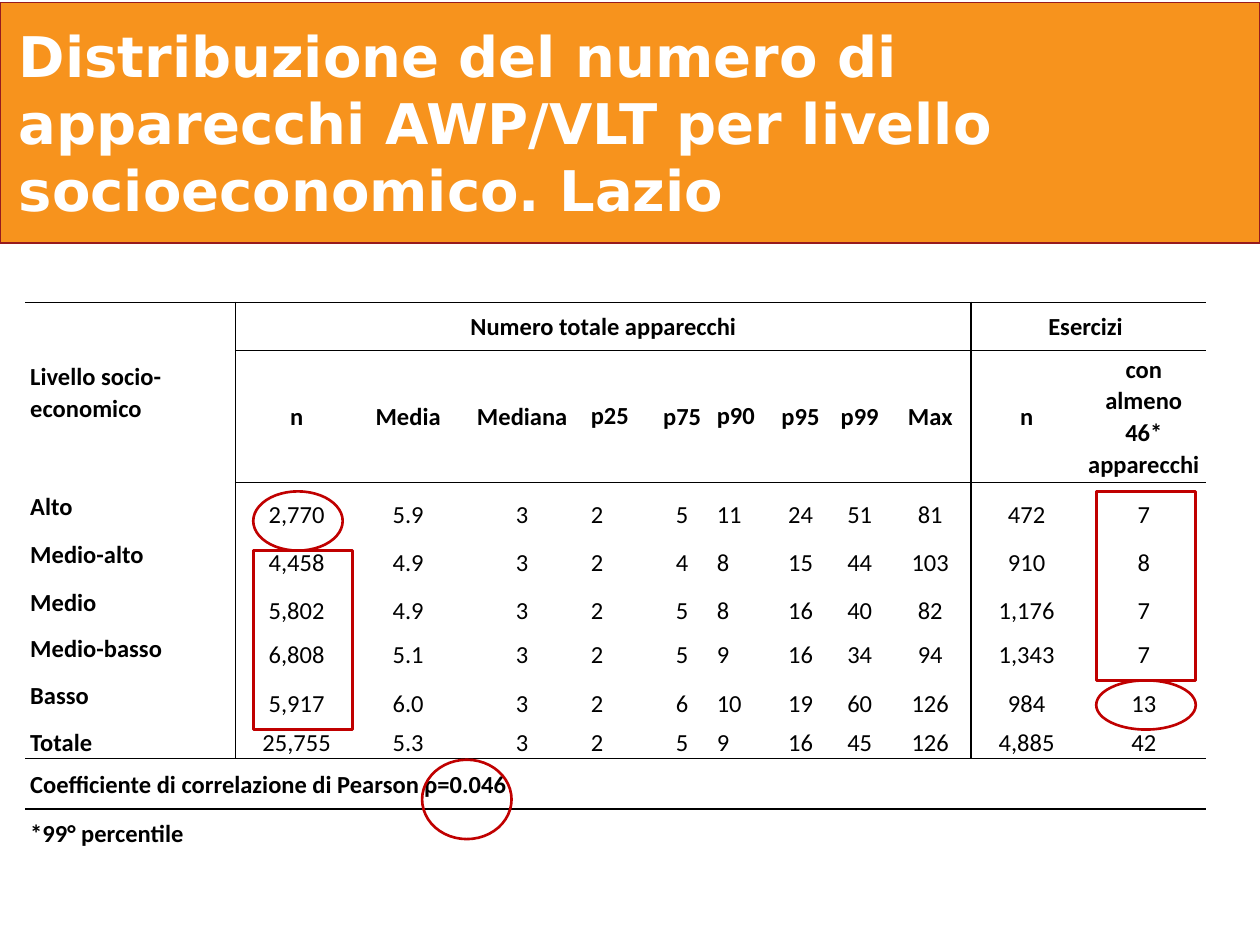
import pptx
import pptx.dml.color
import pptx.enum.shapes
import pptx.enum.text
import pptx.oxml.ns
import pptx.util
from lxml import etree

Inches, Pt = pptx.util.Inches, pptx.util.Pt
ALIGN, ANCHOR = pptx.enum.text.PP_ALIGN, pptx.enum.text.MSO_ANCHOR
SHAPE = pptx.enum.shapes.MSO_SHAPE

COLOURS = {"banner": "F7931D", "banner edge": "971B1E", "mark": "C00000",
           "white": "FFFFFF", "black": "000000"}
TITLE = "Distribuzione del numero di apparecchi AWP/VLT per livello socioeconomico. Lazio"
HEADINGS = ["n", "Media", "Mediana", "p25", "p75", "p90", "p95", "p99", "Max", "n",
            "con almeno 46* apparecchi"]
LEVELS = [
    ["Alto", "2,770", "5.9", "3", "2", "5", "11", "24", "51", "81", "472", "7"],
    ["Medio-alto", "4,458", "4.9", "3", "2", "4", "8", "15", "44", "103", "910", "8"],
    ["Medio", "5,802", "4.9", "3", "2", "5", "8", "16", "40", "82", "1,176", "7"],
    ["Medio-basso", "6,808", "5.1", "3", "2", "5", "9", "16", "34", "94", "1,343", "7"],
    ["Basso", "5,917", "6.0", "3", "2", "6", "10", "19", "60", "126", "984", "13"],
    ["Totale", "25,755", "5.3", "3", "2", "5", "9", "16", "45", "126", "4,885", "42"],
]
PEARSON = "Coefficiente di correlazione di Pearson ρ=0.046"
FOOTNOTE = "*99° percentile"

COLUMN_WIDTHS = [1.67, 0.97, 0.8, 0.8, 0.21, 0.35, 0.18, 0.47, 0.15, 0.32, 0.47, 0.47,
                 0.65, 0.88, 0.98]
ROW_HEIGHTS = [0.38, 1.05, 0.38, 0.38, 0.38, 0.35, 0.39, 0.31, 0.4, 0.38]
CELL_MARGIN = 0.04
FIELD_STARTS = [0, 1, 2, 3, 5, 7, 8, 10, 11, 12, 13, 14]
LEFT_ALIGNED = {0, 5, 8}
FIRST_LEVEL, TOTAL, PEARSON_ROW, NOTE_ROW = 2, 7, 8, 9
LAST_COLUMN = len(COLUMN_WIDTHS) - 1
# Line above a row -> first column it crosses
RULES_ABOVE = {0: 0, 1: 1, FIRST_LEVEL: 1, PEARSON_ROW: 0, NOTE_ROW: 0}
RULES_RIGHT_OF = {0, 12}
PLAIN_TABLE_STYLE = "{2D5ABB26-0587-4C30-8999-92F81FD0307C}"

MARKS = [
    (SHAPE.OVAL, 3.35, 6.03, 0.71, 0.63),
    (SHAPE.OVAL, 2.01, 3.9, 0.71, 0.47),
    (SHAPE.RECTANGLE, 2.01, 4.37, 0.79, 1.42),
    (SHAPE.RECTANGLE, 8.7, 3.9, 0.79, 1.5),
    (SHAPE.OVAL, 8.7, 5.4, 0.79, 0.39),
]


def colour(name):
    return pptx.dml.color.RGBColor.from_string(COLOURS[name])


def format_run(span, font, size, name, bold):
    span.font.name, span.font.size, span.font.bold = font, Pt(size), bold
    span.font.color.rgb = colour(name)


def add_outline(page, kind, place, edge, weight):
    shape = page.shapes.add_shape(kind, *map(Inches, place))
    shape.shadow.inherit = False
    shape.fill.background()
    shape.line.color.rgb = colour(edge)
    shape.line.width = Pt(weight)
    return shape


def has_rule_above(row, column):
    return row in RULES_ABOVE and column >= RULES_ABOVE[row]


def cell_edges(row, column):
    """Sides of a cell in schema order, each with whether it carries a line."""
    upright = row <= TOTAL
    return {
        "lnL": upright and column - 1 in RULES_RIGHT_OF,
        "lnR": upright and column in RULES_RIGHT_OF,
        "lnT": has_rule_above(row, column),
        "lnB": has_rule_above(row + 1, column),
    }


def style_cell(cell, row, column):
    properties = cell._tc.get_or_add_tcPr()
    for tag, drawn in cell_edges(row, column).items():
        line = etree.SubElement(properties, pptx.oxml.ns.qn("a:" + tag), w=str(Pt(1)))
        fill = etree.SubElement(line, pptx.oxml.ns.qn("a:solidFill" if drawn else "a:noFill"))
        if drawn:
            etree.SubElement(fill, pptx.oxml.ns.qn("a:srgbClr"), val=COLOURS["black"])
    cell.fill.solid()
    cell.fill.fore_color.rgb = colour("white")
    cell.margin_left = cell.margin_right = Inches(CELL_MARGIN)
    cell.margin_top = cell.margin_bottom = 0
    in_levels = FIRST_LEVEL <= row <= TOTAL
    low = row == TOTAL or (in_levels and column > 0)
    cell.vertical_anchor = ANCHOR.BOTTOM if low else ANCHOR.MIDDLE


def write_cell(table, row, column, text):
    cell = table.cell(row, column)
    cell.text_frame.text = text
    para = cell.text_frame.paragraphs[0]
    para.alignment = ALIGN.LEFT if column in LEFT_ALIGNED else ALIGN.CENTER
    if column not in LEFT_ALIGNED or column == 0:
        para.line_spacing, para.space_after = 1.07, Pt(8)
    number = FIRST_LEVEL <= row <= TOTAL and column > 0
    format_run(para.runs[0], "Calibri", 14, "black", not number)


def add_level_table(page):
    frame = page.shapes.add_table(
        len(ROW_HEIGHTS), len(COLUMN_WIDTHS), Inches(0.2), Inches(2.4),
        Inches(sum(COLUMN_WIDTHS)), Inches(sum(ROW_HEIGHTS)))
    table = frame.table
    table.first_row = table.horz_banding = False
    table._tbl.tblPr.find(pptx.oxml.ns.qn("a:tableStyleId")).text = PLAIN_TABLE_STYLE
    for column, width in zip(table.columns, COLUMN_WIDTHS):
        column.width = Inches(width)
    for row, height in zip(table.rows, ROW_HEIGHTS):
        row.height = Inches(height)
    for row in range(len(ROW_HEIGHTS)):
        for column in range(len(COLUMN_WIDTHS)):
            style_cell(table.cell(row, column), row, column)

    merges = [(0, 0, 1, 0), (0, 1, 0, 12), (0, 13, 0, LAST_COLUMN),
              (PEARSON_ROW, 0, PEARSON_ROW, 12), (NOTE_ROW, 0, NOTE_ROW, 1)]
    merges += [(NOTE_ROW, start, NOTE_ROW, start + 1) for start in (4, 7, 11)]
    field_ends = [start - 1 for start in FIELD_STARTS[1:]] + [LAST_COLUMN]
    merges += [(row, start, row, end) for row in range(1, TOTAL + 1)
               for start, end in zip(FIELD_STARTS, field_ends) if end > start]
    for top, left, bottom, right in merges:
        table.cell(top, left).merge(table.cell(bottom, right))

    for row, column, text in [(0, 0, "Livello socio-economico"),
                              (0, 1, "Numero totale apparecchi"), (0, 13, "Esercizi "),
                              (PEARSON_ROW, 0, PEARSON), (NOTE_ROW, 0, FOOTNOTE)]:
        write_cell(table, row, column, text)
    for column, text in zip(FIELD_STARTS[1:], HEADINGS):
        write_cell(table, 1, column, text)
    for row, level in enumerate(LEVELS, FIRST_LEVEL):
        for column, text in zip(FIELD_STARTS, level):
            write_cell(table, row, column, text)


def add_banner(page):
    banner = add_outline(page, SHAPE.RECTANGLE, (0, 0.02, 10, 1.91), "banner edge", 0.75)
    banner.fill.solid()
    banner.fill.fore_color.rgb = colour("banner")
    frame = banner.text_frame
    frame.word_wrap = True
    frame.vertical_anchor = ANCHOR.TOP
    frame.margin_left = frame.margin_right = Inches(0.15)
    frame.margin_top = frame.margin_bottom = Inches(0.15)
    frame.text = TITLE
    frame.paragraphs[0].alignment = ALIGN.LEFT
    format_run(frame.paragraphs[0].runs[0], "DejaVu Sans", 32, "white", True)


def main():
    deck = pptx.Presentation()
    deck.slide_width, deck.slide_height = Inches(10), Inches(7.5)
    page = deck.slides.add_slide(deck.slide_layouts[6])
    add_level_table(page)
    for kind, *place in MARKS:
        add_outline(page, kind, place, "mark", 1.5)
    add_banner(page)
    deck.save("out.pptx")


if __name__ == "__main__":
    main()
